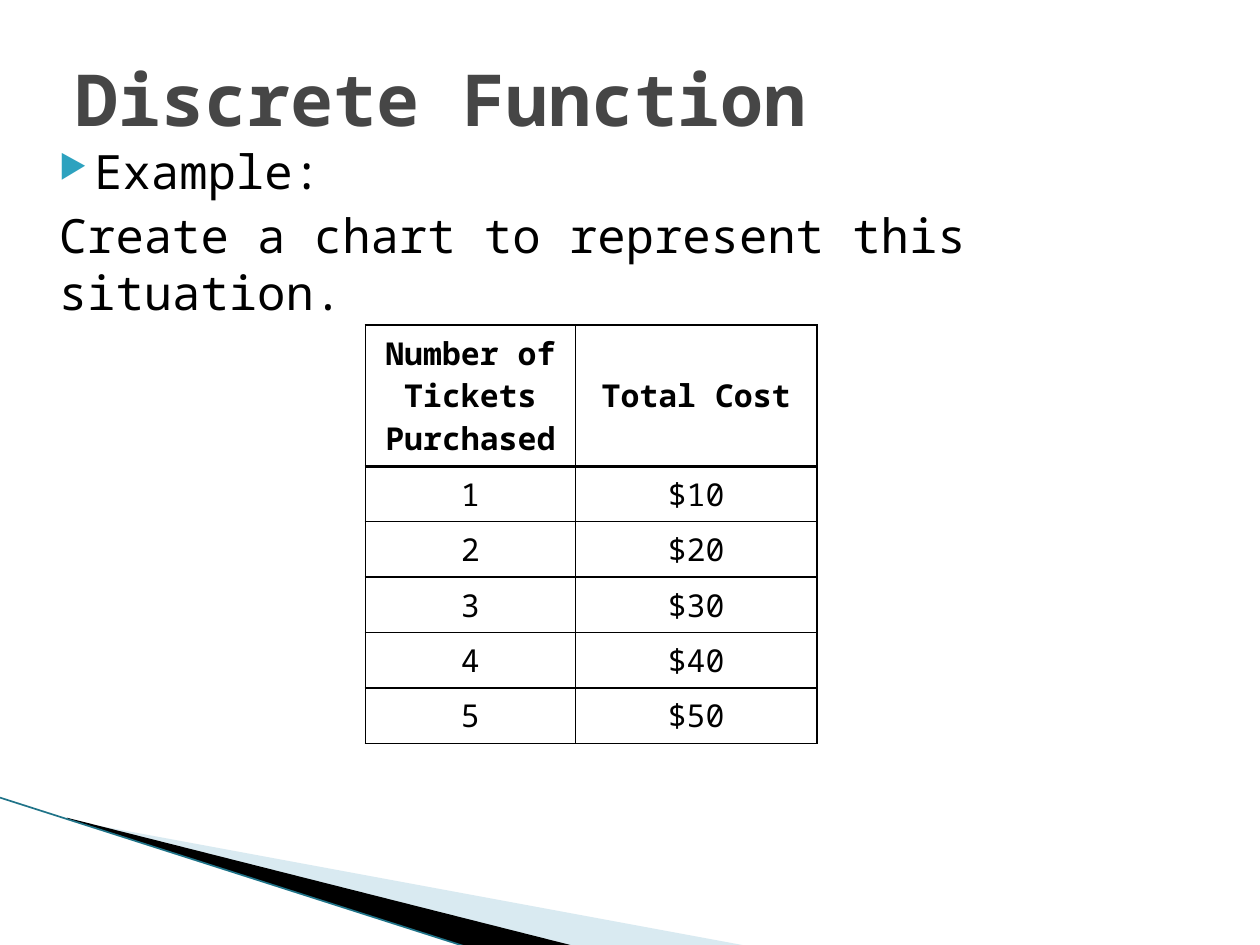
from lxml import etree
from pptx import Presentation
from pptx import util as u
from pptx.dml import color
from pptx.enum import shapes, text
from pptx.oxml import ns

Pt = u.Pt
FONT = "Noto Sans Mono"
BLACK = color.RGBColor(0x00, 0x00, 0x00)
GRAY = color.RGBColor(0x46, 0x46, 0x46)
AQUA = color.RGBColor(0x2D, 0xA2, 0xBF)
TEAL = color.RGBColor(0x1F, 0x73, 0x88)
PALE_BLUE = color.RGBColor(0xA0, 0xCB, 0xDC)

TICKET_ROWS = [("Number of Tickets Purchased", "Total Cost")] + [
    (str(count), f"${count * 10}") for count in range(1, 6)
]


def add_child(parent, tag, **attributes):
    return etree.SubElement(parent, ns.qn(tag), attributes)


def style_paragraph(paragraph, size, font_color, bold=False):
    paragraph.font.name = FONT
    paragraph.font.size = Pt(size)
    paragraph.font.bold = bold
    paragraph.font.color.rgb = font_color


def add_text_frame(slide, left, top, width, height):
    frame = slide.shapes.add_textbox(Pt(left), Pt(top), Pt(width), Pt(height)).text_frame
    frame.word_wrap = True
    return frame


def add_wedge(slide, left, top, points, fill_color, opacity=100):
    corners = [(Pt(left + x), Pt(top + y)) for x, y in points]
    builder = slide.shapes.build_freeform(*corners[0])
    builder.add_line_segments(corners[1:])
    wedge = builder.convert_to_shape()
    wedge.shadow.inherit = False
    wedge.line.fill.background()
    wedge.fill.solid()
    wedge.fill.fore_color.rgb = fill_color
    if opacity < 100:
        fill = wedge.fill._xPr.find(ns.qn("a:solidFill"))
        add_child(fill[0], "a:alpha", val=str(opacity * 1000))


def add_corner_decoration(slide, left, top):
    add_wedge(slide, left, top,
              [(39.6, 13), (428.4, 85), (328.3, 85), (39.6, 12.2)], PALE_BLUE, 40)
    add_wedge(slide, left, top,
              [(38.2, 11.5), (329, 85), (267.8, 85.7), (38.9, 12.2)], BLACK)
    edge = slide.shapes.add_connector(
        shapes.MSO_CONNECTOR.STRAIGHT,
        Pt(left), Pt(top), Pt(left + 267.8), Pt(top + 85.7))
    edge.line.color.rgb = TEAL
    edge.line.width = Pt(0.95)
    add_child(edge._element.spPr, "a:effectLst")


def add_title(slide, left, top, width, height):
    frame = add_text_frame(slide, left, top, width, height)
    frame.vertical_anchor = text.MSO_ANCHOR.MIDDLE
    paragraph = frame.paragraphs[0]
    paragraph.text = "Discrete Function"
    style_paragraph(paragraph, 41, GRAY, bold=True)


def add_body(slide, left, top, width, height):
    frame = add_text_frame(slide, left, top, width, height)
    example = frame.paragraphs[0]
    example.text = "Example:"
    properties = example._p.get_or_add_pPr()
    properties.set("marL", str(Pt(28.8)))
    properties.set("indent", str(Pt(-20.2)))
    bullet_color = add_child(properties, "a:buClr")
    add_child(bullet_color, "a:srgbClr", val=str(AQUA))
    add_child(properties, "a:buSzPct", val="68000")
    add_child(properties, "a:buChar", char="▶")

    task = frame.add_paragraph()
    task.text = "Create a chart to represent this situation."
    task.space_before = Pt(4)
    task._p.get_or_add_pPr().set("marL", str(Pt(8.6)))
    for paragraph in frame.paragraphs:
        style_paragraph(paragraph, 27, BLACK)


def set_borders(cell, bottom_width, top_width):
    properties = cell._tc.get_or_add_tcPr()
    widths = {"a:lnL": 1, "a:lnR": 1, "a:lnT": top_width, "a:lnB": bottom_width}
    for index, (tag, width) in enumerate(widths.items()):
        border = etree.Element(ns.qn(tag), w=str(Pt(width)))
        fill = add_child(border, "a:solidFill")
        add_child(fill, "a:srgbClr", val=str(BLACK))
        properties.insert(index, border)


def add_ticket_table(slide, left, top, column_widths, header_height, row_height):
    height = header_height + row_height * (len(TICKET_ROWS) - 1)
    table = slide.shapes.add_table(
        len(TICKET_ROWS), len(column_widths),
        Pt(left), Pt(top), Pt(sum(column_widths)), Pt(height)).table
    table.horz_banding = False
    for column, width in zip(table.columns, column_widths):
        column.width = Pt(width)
    for row_index, values in enumerate(TICKET_ROWS):
        is_header = row_index == 0
        table.rows[row_index].height = Pt(header_height if is_header else row_height)
        for column_index, value in enumerate(values):
            cell = table.cell(row_index, column_index)
            cell.fill.background()
            cell.vertical_anchor = text.MSO_ANCHOR.MIDDLE
            set_borders(cell, 2 if is_header else 1, 2 if row_index == 1 else 1)
            paragraph = cell.text_frame.paragraphs[0]
            paragraph.text = value
            paragraph.alignment = text.PP_ALIGN.CENTER
            style_paragraph(paragraph, 18, BLACK, bold=is_header)


def main():
    presentation = Presentation()
    presentation.slide_width = Pt(720)
    presentation.slide_height = Pt(540)
    slide = presentation.slides.add_slide(presentation.slide_layouts[6])
    add_corner_decoration(slide, 0, 455.8)
    add_body(slide, 18, 77.8, 648, 437.8)
    add_title(slide, 36, 21.6, 648, 68.4)
    add_ticket_table(slide, 208.8, 185.8, (120, 138), 80.6, 31.7)
    presentation.save("out.pptx")


if __name__ == "__main__":
    main()
